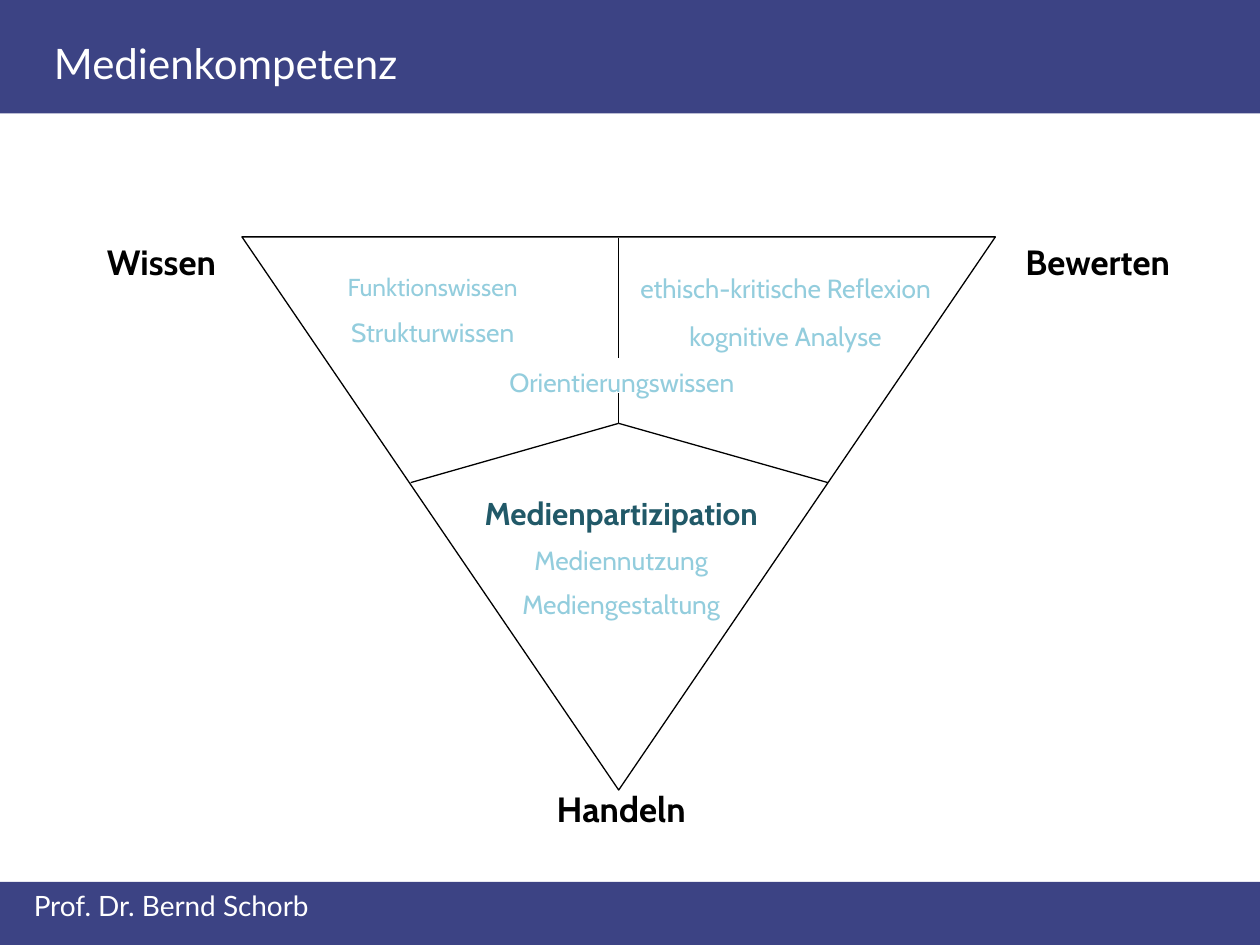
from lxml.etree import SubElement
from pptx import Presentation
from pptx.dml.color import RGBColor
from pptx.enum.shapes import MSO_CONNECTOR, MSO_SHAPE
from pptx.enum.text import MSO_AUTO_SIZE, PP_ALIGN
from pptx.oxml.ns import qn
from pptx.util import Inches, Pt

NAVY = RGBColor(0x3C, 0x43, 0x84)
WHITE = RGBColor(0xFF, 0xFF, 0xFF)
BLACK = RGBColor(0x00, 0x00, 0x00)
TEAL = RGBColor(0x21, 0x59, 0x68)
SKY = RGBColor(0x93, 0xCD, 0xDD)

CORNER = {"name": "Cabin", "size": Pt(20), "bold": True, "color": BLACK}
FOCUS = {"name": "Cabin", "size": Pt(18), "bold": True, "color": TEAL}
TERM = {"name": "Cabin", "size": Pt(15), "bold": False, "color": SKY}
SMALL_TERM = {**TERM, "size": Pt(14)}
TITLE = {"name": "Lato", "size": Pt(24), "color": WHITE}
FOOTER = {**TITLE, "size": Pt(16)}


class SlideBuilder:
    """Holds the line style and the slide being drawn."""

    line_width = Pt(0.75)
    line_color = BLACK

    def __init__(self, slide):
        self.slide = slide

    def shape(self, kind, left, top, width, height):
        shape = self.slide.shapes.add_shape(
            kind, Inches(left), Inches(top), Inches(width), Inches(height))
        shape.shadow.inherit = False
        return shape

    def band(self, top, height):
        band = self.shape(MSO_SHAPE.RECTANGLE, 0, top, 10, height)
        band.fill.solid()
        band.fill.fore_color.rgb = NAVY
        band.line.fill.background()

    def inverted_triangle(self, left, top, width, height):
        triangle = self.shape(MSO_SHAPE.ISOSCELES_TRIANGLE, left, top, width, height)
        triangle.rotation = 180
        triangle.fill.background()
        triangle.line.color.rgb = self.line_color
        triangle.line.width = self.line_width

    def line(self, start, end):
        line = self.slide.shapes.add_connector(
            MSO_CONNECTOR.STRAIGHT, *(Inches(value) for value in (*start, *end)))
        line.line.color.rgb = self.line_color
        line.line.width = self.line_width
        SubElement(line._element.spPr, qn("a:effectLst"))

    def text(self, position, lines, wrap=False, **paragraph_format):
        """Write one paragraph for each (wording, font style) pair."""
        box = self.slide.shapes.add_textbox(*(Inches(value) for value in position))
        frame = box.text_frame
        frame.word_wrap = wrap
        frame.auto_size = MSO_AUTO_SIZE.SHAPE_TO_FIT_TEXT
        for index, (wording, style) in enumerate(lines):
            para = frame.add_paragraph() if index else frame.paragraphs[0]
            for name, value in paragraph_format.items():
                setattr(para, name, value)
            span = para.add_run()
            span.text = wording
            for name, value in style.items():
                if name == "color":
                    span.font.color.rgb = value
                else:
                    setattr(span.font, name, value)


def main():
    deck = Presentation()
    deck.slide_width, deck.slide_height = Inches(10), Inches(7.5)
    page = SlideBuilder(deck.slides.add_slide(deck.slide_layouts[6]))

    page.band(0, 0.9)
    page.text((0.33, 0.25, 7.34, 0.5), [("Medienkompetenz", TITLE)], wrap=True)
    page.band(7, 0.5)
    page.text((0.17, 7, 9.67, 0.37), [("Prof. Dr. Bernd Schorb", FOOTER)], wrap=True)

    page.inverted_triangle(1.92, 1.88, 5.98, 4.39)
    center = (4.91, 3.36)
    for edge in ((3.26, 3.83), (6.57, 3.83), (4.91, 3.12)):
        page.line(edge, center)
    page.line((4.91, 1.89), (4.91, 2.84))

    for wording, position in (
        ("Wissen", (0.75, 1.86, 1.1, 0.44)),
        ("Bewerten", (8.04, 1.86, 1.47, 0.44)),
        ("Handeln", (4.32, 6.2, 1.3, 0.43)),
    ):
        page.text(position, [(wording, CORNER)])

    for position, spacing, lines in (
        ((3.64, 3.75, 2.58, 1.23), 1.4, [("Medienpartizipation", FOCUS),
                                         ("Mediennutzung", TERM),
                                         ("Mediengestaltung", TERM)]),
        ((2.63, 1.99, 1.61, 0.83), 1.5, [("Funktionswissen", SMALL_TERM),
                                         ("Strukturwissen", TERM)]),
        ((4.88, 1.99, 2.71, 0.88), 1.5, [("ethisch-kritische Reflexion", TERM),
                                         ("kognitive Analyse", TERM)]),
        ((3.89, 2.86, 2.09, 0.43), 1.0, [("Orientierungswissen", TERM)]),
    ):
        page.text(position, lines, alignment=PP_ALIGN.CENTER, line_spacing=spacing)

    deck.save("out.pptx")


if __name__ == "__main__":
    main()
